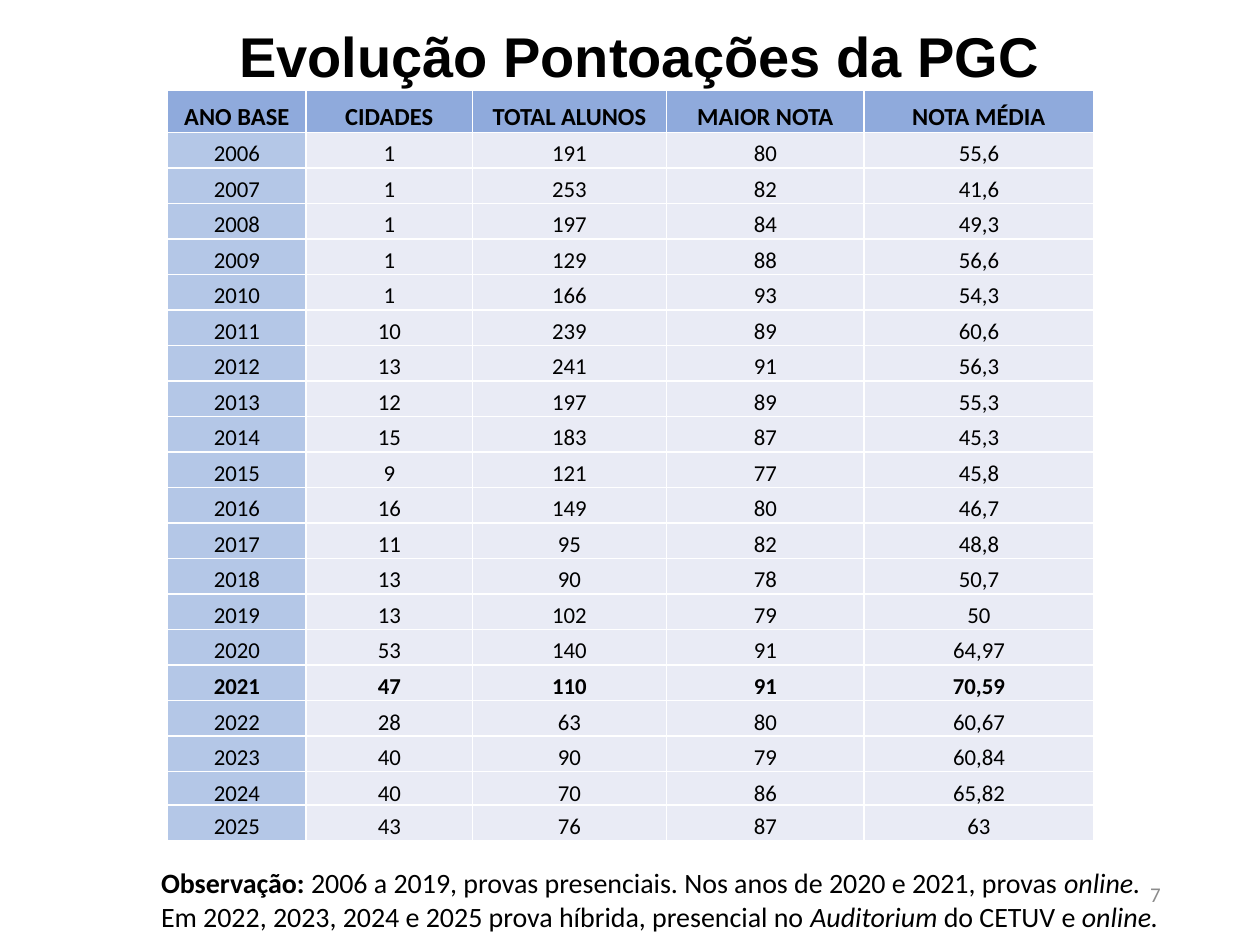
from lxml.etree import SubElement
from pptx import Presentation
from pptx.dml.color import RGBColor
from pptx.enum.text import MSO_ANCHOR, MSO_AUTO_SIZE, PP_ALIGN
from pptx.oxml.ns import qn
from pptx.util import Inches, Pt

BLACK = RGBColor(0x00, 0x00, 0x00)
GRAY = RGBColor(0x8C, 0x8C, 0x8C)
WHITE = RGBColor(0xFF, 0xFF, 0xFF)
HEADER_BLUE = RGBColor(0x8F, 0xAA, 0xDC)
YEAR_BLUE = RGBColor(0xB4, 0xC7, 0xE7)
CELL_GRAY = RGBColor(0xE9, 0xEB, 0xF5)

TABLE_LEFT, TABLE_TOP, TABLE_HEIGHT = 1.33, 0.72, 5.69
LAST_YEAR_TOP = 6.39
COLUMN_WIDTHS = [1.1, 1.32, 1.54, 1.57, 1.82]
HEADER_HEIGHT, LAST_YEAR_HEIGHT = 0.33, 0.28
BEST_YEAR = "2021"

HEADER = ["ANO BASE", "CIDADES", "TOTAL ALUNOS", "MAIOR NOTA", "NOTA MÉDIA"]
YEARS = [
    ["2006", "1", "191", "80", "55,6"],
    ["2007", "1", "253", "82", "41,6"],
    ["2008", "1", "197", "84", "49,3"],
    ["2009", "1", "129", "88", "56,6"],
    ["2010", "1", "166", "93", "54,3"],
    ["2011", "10", "239", "89", "60,6"],
    ["2012", "13", "241", "91", "56,3"],
    ["2013", "12", "197", "89", "55,3"],
    ["2014", "15", "183", "87", "45,3"],
    ["2015", "9", "121", "77", "45,8"],
    ["2016", "16", "149", "80", "46,7"],
    ["2017", "11", "95", "82", "48,8"],
    ["2018", "13", "90", "78", "50,7"],
    ["2019", "13", "102", "79", "50"],
    ["2020", "53", "140", "91", "64,97"],
    ["2021", "47", "110", "91", "70,59"],
    ["2022", "28", "63", "80", "60,67"],
    ["2023", "40", "90", "79", "60,84"],
    ["2024", "40", "70", "86", "65,82"],
]
LAST_YEAR = ["2025", "43", "76", "87", "63"]

# Each line of the note is a list of (text, bold, italic)
NOTE_LINES = [
    [("Observação:", True, False),
     (" 2006 a 2019, provas presenciais. Nos anos de 2020 e 2021, provas ", False, False),
     ("online. ", False, True)],
    [("Em 2022, 2023, 2024 e 2025 prova híbrida, presencial no ", False, False),
     ("Auditorium ", False, True),
     ("do CETUV e ", False, False),
     ("online.", False, True)],
]


class SlideBuilder:
    """Holds the style and the current slide."""

    title_font = "Arial"
    body_font = "Calibri"

    def __init__(self, slide):
        self.slide = slide

    def format_run(self, run, size, color=BLACK, bold=False, italic=False, name=None):
        font = run.font
        font.name = name or self.body_font
        font.size = Pt(size)
        font.color.rgb = color
        font.bold = bold
        font.italic = italic

    def add_title(self, text, left, top, width, height):
        title = self.slide.shapes.title
        title.left, title.top = Inches(left), Inches(top)
        title.width, title.height = Inches(width), Inches(height)
        text_frame = title.text_frame
        text_frame.text = text
        text_frame.auto_size = MSO_AUTO_SIZE.NONE
        text_frame.vertical_anchor = MSO_ANCHOR.TOP
        paragraph = text_frame.paragraphs[0]
        paragraph.alignment = PP_ALIGN.CENTER
        paragraph.line_spacing = 0.9
        self.format_run(paragraph.runs[0], 32, bold=True, name=self.title_font)

    def add_text_box(self, left, top, width, height):
        box = self.slide.shapes.add_textbox(
            Inches(left), Inches(top), Inches(width), Inches(height))
        box.text_frame.word_wrap = True
        return box.text_frame

    def add_page_number(self, text, left, top, width, height):
        text_frame = self.add_text_box(left, top, width, height)
        text_frame.text = text
        text_frame.vertical_anchor = MSO_ANCHOR.MIDDLE
        paragraph = text_frame.paragraphs[0]
        paragraph.alignment = PP_ALIGN.RIGHT
        self.format_run(paragraph.runs[0], 12, GRAY)

    def add_note(self, lines, left, top, width, height):
        text_frame = self.add_text_box(left, top, width, height)
        text_frame.auto_size = MSO_AUTO_SIZE.SHAPE_TO_FIT_TEXT
        paragraph = text_frame.paragraphs[0]
        for index, line in enumerate(lines):
            if index:
                paragraph.add_line_break()
            for text, bold, italic in line:
                run = paragraph.add_run()
                run.text = text
                self.format_run(run, 16, bold=bold, italic=italic)

    def add_table(self, rows, row_heights, top):
        table = self.slide.shapes.add_table(
            len(rows), len(COLUMN_WIDTHS), Inches(TABLE_LEFT), Inches(top),
            Inches(sum(COLUMN_WIDTHS)), Inches(sum(row_heights))).table
        table.first_row = rows[0] == HEADER
        table.horz_banding = False
        for column, width in zip(table.columns, COLUMN_WIDTHS):
            column.width = Inches(width)
        for row, height, values in zip(table.rows, row_heights, rows):
            row.height = Inches(height)
            is_header = values == HEADER
            bold = is_header or values[0] == BEST_YEAR
            for index, (cell, value) in enumerate(zip(row.cells, values)):
                body_fill = CELL_GRAY if index else YEAR_BLUE
                self.format_cell(cell, value, HEADER_BLUE if is_header else body_fill,
                                 14 if is_header else 13, bold)

    def format_cell(self, cell, value, fill, size, bold):
        cell.text_frame.text = value
        cell.vertical_anchor = MSO_ANCHOR.BOTTOM
        cell.margin_left = cell.margin_right = cell.margin_top = Inches(0.01)
        cell.margin_bottom = 0
        paragraph = cell.text_frame.paragraphs[0]
        paragraph.alignment = PP_ALIGN.CENTER
        self.format_run(paragraph.runs[0], size, bold=bold)
        # Borders come before the fill in the cell properties
        properties = cell._tc.get_or_add_tcPr()
        for side in ("a:lnL", "a:lnR", "a:lnT", "a:lnB"):
            line = SubElement(properties, qn(side), w=str(Pt(1)))
            line_fill = SubElement(line, qn("a:solidFill"))
            SubElement(line_fill, qn("a:srgbClr"), val=str(WHITE))
        cell.fill.solid()
        cell.fill.fore_color.rgb = fill


def main():
    presentation = Presentation()
    presentation.slide_width = Inches(10)
    presentation.slide_height = Inches(7.5)
    title_only = presentation.slide_layouts[5]
    builder = SlideBuilder(presentation.slides.add_slide(title_only))

    # Title, page number and note
    builder.add_title("Evolução Pontoações da PGC", 0.69, 0.18, 8.77, 0.78)
    builder.add_page_number("7", 7.06, 6.9, 2.25, 0.4)
    builder.add_note(NOTE_LINES, 1.18, 6.82, 8.77, 0.64)

    # Main table, with the latest year in a table of its own below
    year_height = (TABLE_HEIGHT - HEADER_HEIGHT) / len(YEARS)
    builder.add_table([HEADER] + YEARS,
                      [HEADER_HEIGHT] + [year_height] * len(YEARS), TABLE_TOP)
    builder.add_table([LAST_YEAR], [LAST_YEAR_HEIGHT], LAST_YEAR_TOP)

    presentation.save("out.pptx")


if __name__ == "__main__":
    main()
